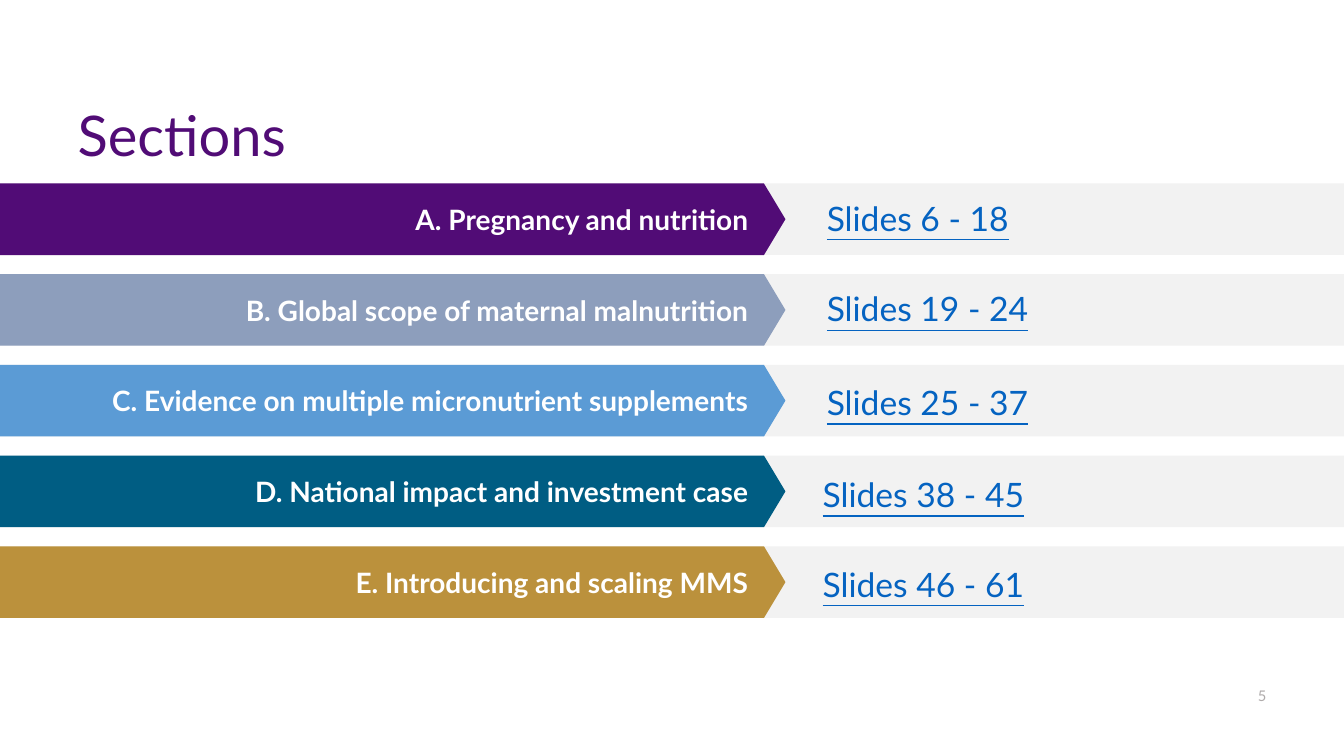
from dataclasses import dataclass

from pptx import Presentation
from pptx.dml.color import RGBColor
from pptx.enum.shapes import MSO_SHAPE
from pptx.enum.text import MSO_ANCHOR, PP_ALIGN
from pptx.shapes.autoshape import Shape
from pptx.slide import Slide
from pptx.util import Inches, Pt

RECTANGLE, PENTAGON = MSO_SHAPE.RECTANGLE, MSO_SHAPE.PENTAGON
MIDDLE, BOTTOM = MSO_ANCHOR.MIDDLE, MSO_ANCHOR.BOTTOM
LEFT, RIGHT = PP_ALIGN.LEFT, PP_ALIGN.RIGHT

FONT = "Lato"
PURPLE = RGBColor(0x51, 0x0C, 0x76)
GREY_BLUE = RGBColor(0x8D, 0x9E, 0xBC)
BLUE = RGBColor(0x5B, 0x9B, 0xD5)
TEAL = RGBColor(0x00, 0x5D, 0x83)
GOLD = RGBColor(0xBB, 0x91, 0x3C)
PALE_GREY = RGBColor(0xF2, 0xF2, 0xF2)
NUMBER_GREY = RGBColor(0xAF, 0xAB, 0xAB)
LINK_BLUE = RGBColor(0x05, 0x63, 0xC1)
WHITE = RGBColor(0xFF, 0xFF, 0xFF)

SLIDE_WIDTH = 13.33
FIRST_TOP, ROW_PITCH, ROW_HEIGHT = 1.82, 0.9, 0.71
ARROW_WIDTH, LABEL_RIGHT = 7.79, 7.52


@dataclass(frozen=True)
class Section:
    label: str
    slides: str
    color: RGBColor
    label_left: float
    slides_left: float
    slides_top: float


SECTIONS = (
    Section("A. Pregnancy and nutrition", "Slides 6 - 18", PURPLE, 1, 8.2, 1.83),
    Section("B. Global scope of maternal malnutrition", "Slides 19 - 24", GREY_BLUE, 1, 8.2, 2.73),
    Section("C. Evidence on multiple micronutrient supplements", "Slides 25 - 37", BLUE, 0, 8.2, 3.66),
    Section("D. National impact and investment case", "Slides 38 - 45", TEAL, 1, 8.16, 4.57),
    Section("E. Introducing and scaling MMS", "Slides 46 - 61", GOLD, 1, 8.16, 5.46),
)


def write(sp: Shape, text: str, size: float, color: RGBColor, align: PP_ALIGN = LEFT,
          anchor: MSO_ANCHOR = MIDDLE, inset: float = 0, line_spacing: float = 1,
          bold: bool = False, underline: bool = False) -> None:
    tf = sp.text_frame
    tf.text = text
    tf.word_wrap = True
    tf.vertical_anchor = anchor
    tf.margin_left = tf.margin_right = Inches(inset)
    tf.margin_top = tf.margin_bottom = Inches(inset / 2)
    p = tf.paragraphs[0]
    p.alignment = align
    p.line_spacing = line_spacing
    font = p.runs[0].font
    font.name, font.size = FONT, Pt(size)
    font.bold, font.underline = bold, underline
    font.color.rgb = color


def add_box(s: Slide, left: float, top: float, width: float, height: float) -> Shape:
    return s.shapes.add_textbox(Inches(left), Inches(top), Inches(width), Inches(height))


def add_bar(s: Slide, kind: MSO_SHAPE, top: float, width: float, color: RGBColor) -> Shape:
    sp = s.shapes.add_shape(kind, 0, Inches(top), Inches(width), Inches(ROW_HEIGHT))
    sp.shadow.inherit = False
    sp.fill.solid()
    sp.fill.fore_color.rgb = color
    sp.line.fill.background()
    return sp


def add_section(s: Slide, section: Section, top: float) -> None:
    add_bar(s, RECTANGLE, top, SLIDE_WIDTH, PALE_GREY)
    arrow = add_bar(s, PENTAGON, top, ARROW_WIDTH, section.color)
    arrow.adjustments[0] = 0.3

    label = add_box(s, section.label_left, top, LABEL_RIGHT - section.label_left, ROW_HEIGHT)
    write(label, section.label, 20, WHITE, align=RIGHT, inset=0.1, bold=True)

    slides = add_box(s, section.slides_left, section.slides_top, 4.95, ROW_HEIGHT)
    write(slides, section.slides, 24, LINK_BLUE, line_spacing=0.9, underline=True)


def main() -> None:
    prs = Presentation()
    prs.slide_width, prs.slide_height = Inches(SLIDE_WIDTH), Inches(7.5)
    s = prs.slides.add_slide(prs.slide_layouts[5])

    title = s.shapes.title
    title.left, title.top = Inches(0.77), Inches(0.32)
    title.width, title.height = Inches(11.79), Inches(1.35)
    write(title, "Sections", 40, PURPLE, anchor=BOTTOM, line_spacing=0.9)

    for i, section in enumerate(SECTIONS):
        add_section(s, section, FIRST_TOP + i * ROW_PITCH)

    write(add_box(s, 12.22, 6.7, 0.34, 0.4), "5", 10.5, NUMBER_GREY, align=RIGHT)
    prs.save("out.pptx")


if __name__ == "__main__":
    main()
